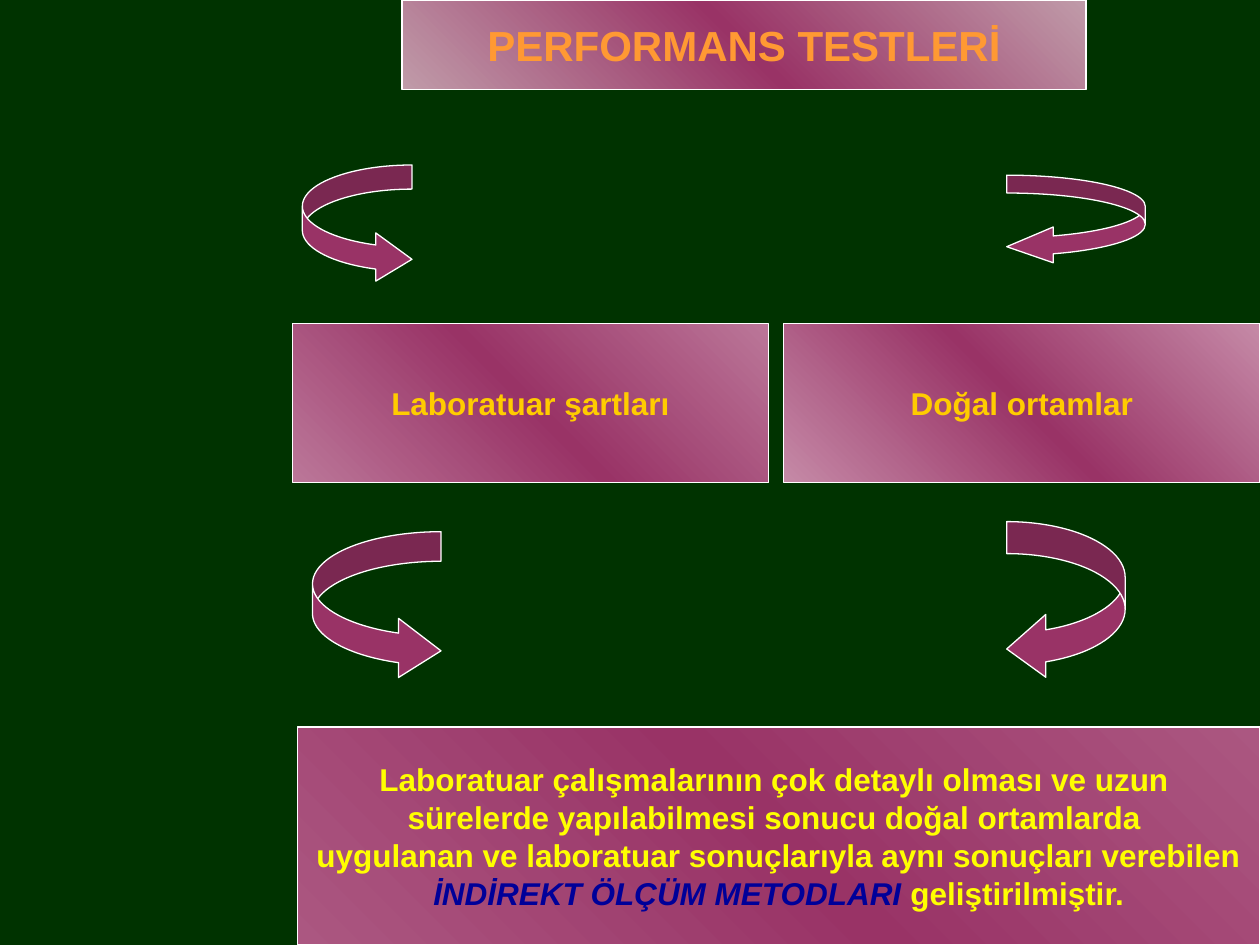
from copy import deepcopy

from pptx import Presentation
from pptx import util as u
from pptx.dml.color import RGBColor
from pptx.enum import shapes, text
from pptx.oxml.ns import qn

WIDTH, HEIGHT = 10, 7.5
THEME = {
    "font": "Arial", "title_size": 24, "body_size": 18, "line_width": 0.75,
    "background": "003300", "plum": "993366", "line": "FFFFFF",
    "title": "FF9933", "label": "FFCC00", "body": "FFFF00", "accent": "000099",
}

# Content: each paragraph is a list of (text, colour, italic) runs
TITLE = [[("PERFORMANS TESTLERİ", "title", False)]]
SETTINGS = [
    ("Laboratuar şartları", "BB7799"),
    ("Doğal ortamlar", "C58AA7"),
]
CONCLUSION = [
    [("Laboratuar çalışmalarının çok detaylı olması ve uzun ", "body", False)],
    [("sürelerde yapılabilmesi sonucu doğal ortamlarda ", "body", False)],
    [("uygulanan ve laboratuar sonuçlarıyla aynı sonuçları verebilen", "body", False)],
    [("İNDİREKT ÖLÇÜM METODLARI", "accent", True),
     (" geliştirilmiştir.", "body", False)],
]

# Curved arrows: preset, (left, top, width, height), adjustments
RIGHT = shapes.MSO_SHAPE.CURVED_RIGHT_ARROW
LEFT = shapes.MSO_SHAPE.CURVED_LEFT_ARROW
ARROWS = [
    (RIGHT, (2.4, 1.31, 0.87, 0.94), (0.22, 0.44, 0.33)),
    (LEFT, (7.99, 1.39, 1.1, 0.71), (0.2, 0.4, 0.52)),
    (RIGHT, (2.48, 4.22, 1.02, 1.18), (0.23, 0.46, 0.33)),
    (LEFT, (7.99, 4.14, 0.94, 1.26), (0.27, 0.53, 0.33)),
]

# Boxes end at the right slide edge; the two settings share one row
SETTING_TOP, SETTING_WIDTH, SETTING_HEIGHT, SETTING_GAP = 2.57, 3.78, 1.26, 0.12
CONCLUSION_WIDTH, CONCLUSION_HEIGHT = 7.64, 1.73


def color(name):
    return RGBColor.from_string(THEME.get(name, name))


def add_outlined(slide, preset, area):
    shape = slide.shapes.add_shape(preset, *(u.Inches(value) for value in area))
    shape.shadow.inherit = False
    shape.line.color.rgb = color("line")
    shape.line.width = u.Pt(THEME["line_width"])
    return shape


def fill_diagonal(shape, edge):
    """Edge colour in two corners, plum along the diagonal."""
    shape.fill.gradient()
    shape.fill.gradient_angle = 45
    stop_list = shape._element.spPr.find(qn("a:gradFill")).find(qn("a:gsLst"))
    stop_list.insert(1, deepcopy(stop_list[0]))
    stops = zip(shape.fill.gradient_stops, (0, 0.5, 1), (edge, "plum", edge))
    for stop, position, name in stops:
        stop.position = position
        stop.color.rgb = color(name)


def add_box(slide, area, edge, paragraphs, size):
    shape = add_outlined(slide, shapes.MSO_SHAPE.RECTANGLE, area)
    fill_diagonal(shape, edge)
    frame = shape.text_frame
    frame.word_wrap = False
    frame.vertical_anchor = text.MSO_ANCHOR.MIDDLE
    for index, runs in enumerate(paragraphs):
        paragraph = frame.add_paragraph() if index else frame.paragraphs[0]
        paragraph.alignment = text.PP_ALIGN.CENTER
        for words, name, italic in runs:
            run = paragraph.add_run()
            run.text = words
            run.font.name = THEME["font"]
            run.font.size = u.Pt(THEME[size])
            run.font.bold = True
            run.font.italic = italic
            run.font.color.rgb = color(name)


def main():
    presentation = Presentation()
    presentation.slide_width = u.Inches(WIDTH)
    presentation.slide_height = u.Inches(HEIGHT)
    slide = presentation.slides.add_slide(presentation.slide_layouts[6])
    slide.background.fill.solid()
    slide.background.fill.fore_color.rgb = color("background")

    # Conclusion in the bottom right corner
    corner = (WIDTH - CONCLUSION_WIDTH, HEIGHT - CONCLUSION_HEIGHT)
    add_box(slide, (*corner, CONCLUSION_WIDTH, CONCLUSION_HEIGHT),
            "AB5781", CONCLUSION, "body_size")

    # Two test settings, side by side
    step = SETTING_WIDTH + SETTING_GAP
    first_left = WIDTH - SETTING_WIDTH - step
    for column, (label, edge) in enumerate(SETTINGS):
        area = (first_left + column * step, SETTING_TOP, SETTING_WIDTH, SETTING_HEIGHT)
        add_box(slide, area, edge, [[(label, "label", False)]], "body_size")

    # Arrows between the rows
    for preset, area, adjustments in ARROWS:
        arrow = add_outlined(slide, preset, area)
        arrow.fill.solid()
        arrow.fill.fore_color.rgb = color("plum")
        for index, value in enumerate(adjustments):
            arrow.adjustments[index] = value

    # Title at the top edge
    add_box(slide, (3.19, 0, 5.43, 0.71), "C09BA9", TITLE, "title_size")

    presentation.save("out.pptx")


if __name__ == "__main__":
    main()
